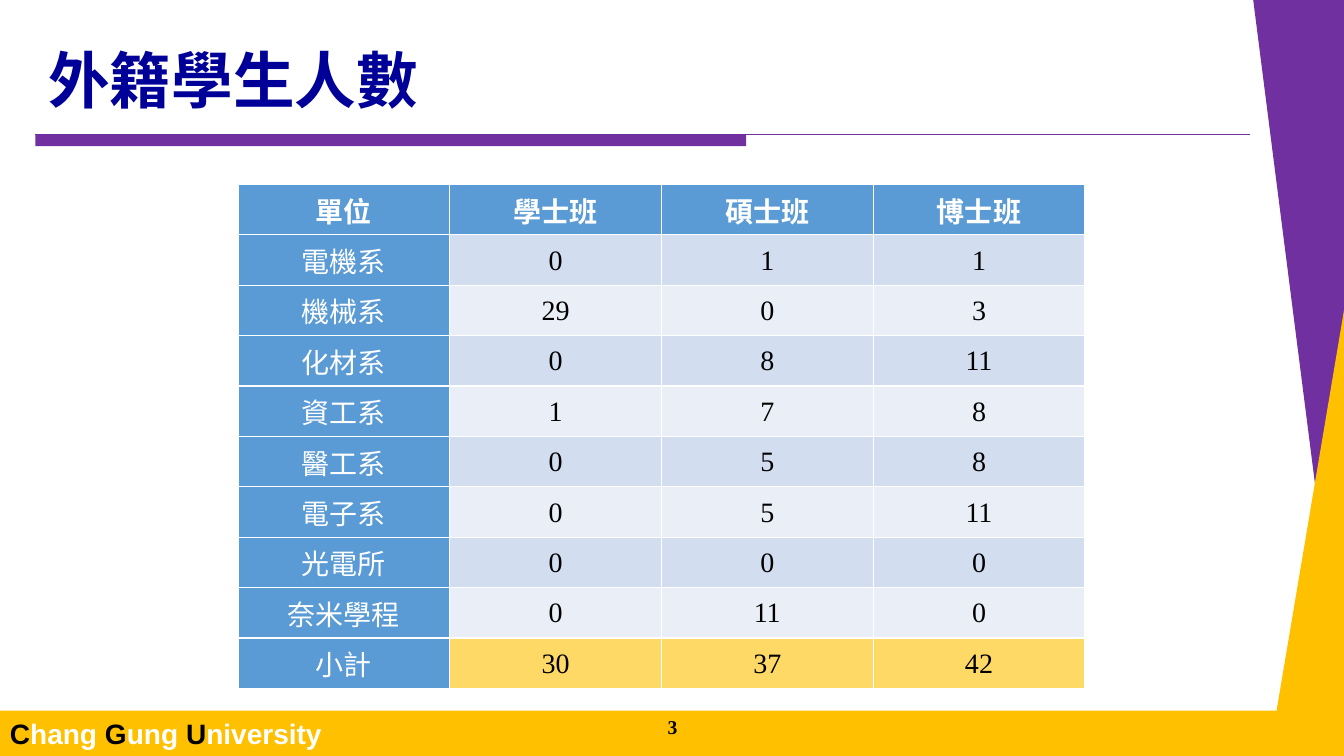
import pptx
import pptx.dml.color
import pptx.enum.shapes
import pptx.enum.text
import pptx.oxml.ns
import pptx.util
from lxml import etree
from pptx.util import Inches

COLORS = {
    "gold": "FFC000", "purple": "7030A0", "navy": "000099",
    "white": "FFFFFF", "black": "000000", "blue": "5B9BD5",
    "band_dark": "D2DEEF", "band_light": "EAEFF7", "total": "FFD966",
}
CJK_FONT = "Noto Sans CJK SC"
SERIF = "Times New Roman"
ALIGN = pptx.enum.text.PP_ALIGN
ANCHOR = pptx.enum.text.MSO_ANCHOR

STUDENTS = [
    ("單位", "學士班", "碩士班", "博士班"),
    ("電機系", "0", "1", "1"),
    ("機械系", "29", "0", "3"),
    ("化材系", "0", "8", "11"),
    ("資工系", "1", "7", "8"),
    ("醫工系", "0", "5", "8"),
    ("電子系", "0", "5", "11"),
    ("光電所", "0", "0", "0"),
    ("奈米學程", "0", "11", "0"),
    ("小計", "30", "37", "42"),
]


def rgb(name):
    return pptx.dml.color.RGBColor.from_string(COLORS[name])


def set_attrs(obj, values):
    for name, value in values.items():
        setattr(obj, name, value)


def add_run(p, text, color, size, font, bold=False):
    r = p.add_run()
    r.text = text
    set_attrs(r.font, {"size": pptx.util.Pt(size), "name": font, "bold": bold})
    r.font.color.rgb = rgb(color)
    ea = etree.SubElement(r.font._element, pptx.oxml.ns.qn("a:ea"))
    ea.set("typeface", CJK_FONT)


def paint(sp, color):
    """Give a shape a plain fill with no outline or shadow."""
    sp.fill.solid()
    sp.fill.fore_color.rgb = rgb(color)
    sp.line.fill.background()
    sp.shadow.inherit = False


def add_bar(s, box, color):
    sp = s.shapes.add_shape(pptx.enum.shapes.MSO_SHAPE.RECTANGLE,
                            *map(Inches, box))
    paint(sp, color)
    return sp


def add_triangle(s, points, color):
    start, *others = [(Inches(x), Inches(y)) for x, y in points]
    builder = s.shapes.build_freeform(*start)
    builder.add_line_segments(others, close=True)
    paint(builder.convert_to_shape(), color)


def add_rule(s, x1, x2, y, color):
    line = s.shapes.add_connector(pptx.enum.shapes.MSO_CONNECTOR.STRAIGHT,
                                  Inches(x1), Inches(y), Inches(x2), Inches(y))
    line.line.color.rgb = rgb(color)
    line.line.width = pptx.util.Pt(0.75)
    etree.SubElement(line._element.spPr, pptx.oxml.ns.qn("a:effectLst"))


def add_footer(s):
    bar = add_bar(s, (0, 7.05, 13.33, 0.45), "gold")
    bar.text_frame.vertical_anchor = ANCHOR.MIDDLE
    p = bar.text_frame.paragraphs[0]
    p.alignment = ALIGN.LEFT
    for initial, rest in (("C", "hang "), ("G", "ung "), ("U", "niversity")):
        add_run(p, initial, "black", 20, "Arial", True)
        add_run(p, rest, "white", 20, "Arial", True)


def add_title(s, text):
    title = s.shapes.title
    set_attrs(title, {"left": Inches(0.38), "top": Inches(0.5),
                      "width": Inches(12.05), "height": Inches(0.91)})
    tf = title.text_frame
    set_attrs(tf, {"auto_size": pptx.enum.text.MSO_AUTO_SIZE.NONE,
                   "vertical_anchor": ANCHOR.TOP, "margin_top": 0})
    p = tf.paragraphs[0]
    set_attrs(p, {"alignment": ALIGN.LEFT, "line_spacing": 0.9})
    add_run(p, text, "navy", 44, CJK_FONT, True)


def add_page_number(s, number):
    box = s.shapes.add_textbox(Inches(5.29), Inches(7.07),
                               Inches(2.76), Inches(0.28))
    tf = box.text_frame
    set_attrs(tf, {"word_wrap": True, "vertical_anchor": ANCHOR.MIDDLE})
    p = tf.paragraphs[0]
    p.alignment = ALIGN.CENTER
    add_run(p, number, "black", 14, SERIF, True)


def cell_fill(row, col):
    if row == 0 or col == 0:
        return "blue"
    if row == len(STUDENTS) - 1:
        return "total"
    return "band_dark" if row % 2 else "band_light"


def add_student_table(s):
    rows, cols = len(STUDENTS), len(STUDENTS[0])
    table = s.shapes.add_table(rows, cols, Inches(2.36), Inches(1.83),
                               Inches(2.1 * cols), Inches(0.5 * rows)).table
    for i, record in enumerate(STUDENTS):
        for j, text in enumerate(record):
            cell = table.cell(i, j)
            cell.fill.solid()
            cell.fill.fore_color.rgb = rgb(cell_fill(i, j))
            heading = i == 0 or j == 0
            if not heading:
                margin = Inches(0.01)
                set_attrs(cell, {"vertical_anchor": ANCHOR.MIDDLE,
                                 "margin_left": margin, "margin_right": margin,
                                 "margin_top": margin, "margin_bottom": 0})
            p = cell.text_frame.paragraphs[0]
            p.alignment = ALIGN.CENTER
            add_run(p, text, "white" if heading else "black", 20, SERIF, i == 0)


def main():
    prs = pptx.Presentation()
    set_attrs(prs, {"slide_width": Inches(13.33), "slide_height": Inches(7.5)})
    s = prs.slides.add_slide(prs.slide_layouts[5])
    add_footer(s)
    add_triangle(s, [(13.33, 7.05), (12.43, 0), (13.33, 0)], "purple")
    add_triangle(s, [(13.33, 3.08), (12.66, 7.06), (13.33, 7.06)], "gold")
    add_bar(s, (0.35, 1.33, 7.05, 0.12), "purple")
    add_rule(s, 0.35, 12.4, 1.33, "purple")
    add_title(s, "外籍學生人數")
    add_page_number(s, "3")
    add_student_table(s)
    prs.save("out.pptx")


if __name__ == "__main__":
    main()
